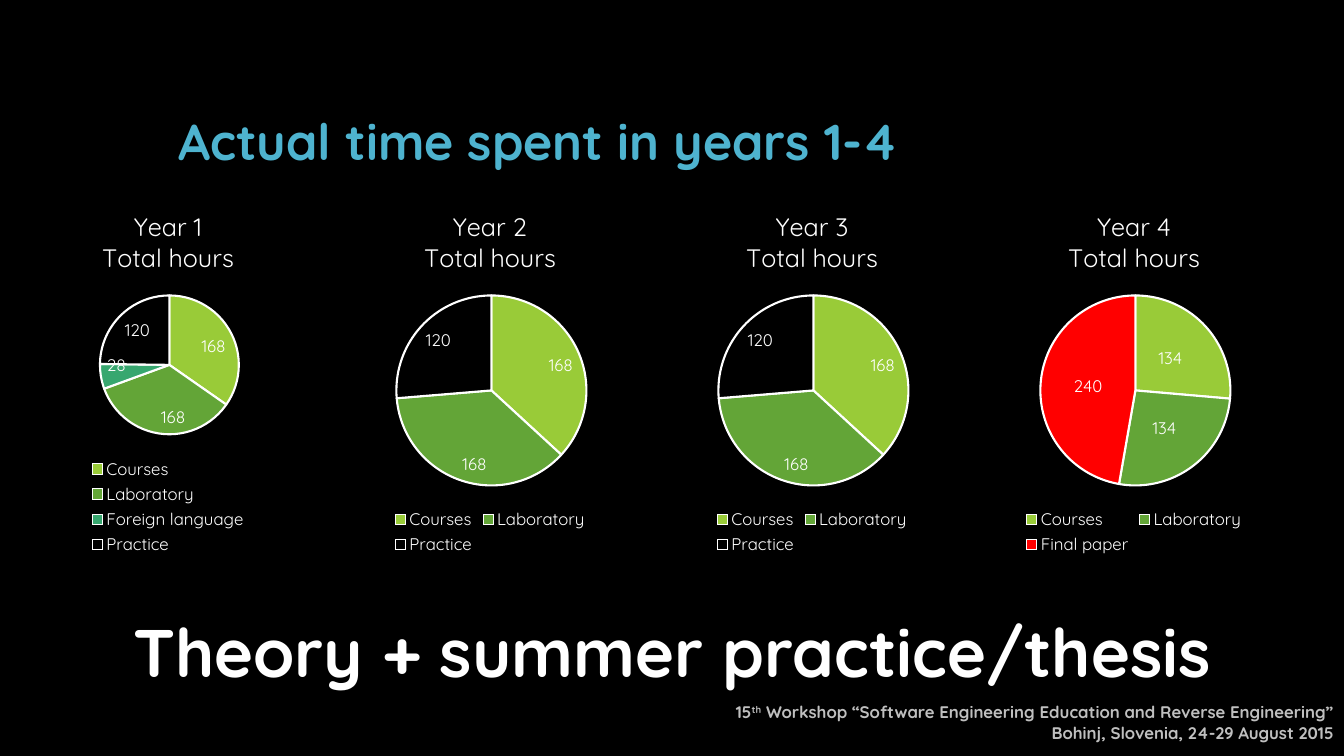
from lxml import etree
from pptx import Presentation
from pptx.chart.data import CategoryChartData
from pptx.dml.color import RGBColor
from pptx.enum.chart import XL_CHART_TYPE, XL_LABEL_POSITION, XL_LEGEND_POSITION
from pptx.enum.text import MSO_ANCHOR, PP_ALIGN
from pptx.oxml.ns import qn
from pptx.util import Inches, Pt

COLORS = {
    "background": "000000",
    "heading": "4EB3CF",
    "text": "FFFFFF",
    "footer": "BFBFBF",
    "Courses": "99CB38",
    "Laboratory": "63A537",
    "Foreign language": "37A76F",
    "Practice": "000000",
    "Final paper": "FF0000",
}
FONT = "Quicksand"
COLUMNS, ROWS = 160, 90

YEARS = [
    {"Courses": 168, "Laboratory": 168, "Foreign language": 28, "Practice": 120},
    {"Courses": 168, "Laboratory": 168, "Practice": 120},
    {"Courses": 168, "Laboratory": 168, "Practice": 120},
    {"Courses": 134, "Laboratory": 134, "Final paper": 240},
]
# Shares of the chart's width and height: x, y, w, h
SMALL_PIE = (0.26, 0.28, 0.49, 0.38)
LARGE_PIE = (0.17, 0.28, 0.67, 0.52)


def color(name):
    return RGBColor.from_string(COLORS[name])


class SlideBuilder:
    def __init__(self, presentation):
        self.width = presentation.slide_width
        self.height = presentation.slide_height
        self.slide = presentation.slides.add_slide(presentation.slide_layouts[5])
        fill = self.slide.background.fill
        fill.solid()
        fill.fore_color.rgb = color("background")

    def area(self, column, row, columns, rows):
        """Turn grid cells into left, top, width and height."""
        x, y = self.width / COLUMNS, self.height / ROWS
        return [round(n) for n in (column * x, row * y, columns * x, rows * y)]

    def style(self, font, size, color_name="text", bold=False):
        font.name = FONT
        font.size = Pt(size)
        font.bold = bold
        font.color.rgb = color(color_name)

    def title(self, wording, cells):
        heading = self.slide.shapes.title
        heading.left, heading.top, heading.width, heading.height = self.area(*cells)
        frame = heading.text_frame
        frame.text = wording
        frame.vertical_anchor = MSO_ANCHOR.BOTTOM
        paragraph = frame.paragraphs[0]
        paragraph.alignment = PP_ALIGN.LEFT
        paragraph.line_spacing = 0.9
        self.style(paragraph.font, 36, "heading", True)

    def text(self, lines, cells, size, color_name, alignment):
        """Add bold lines, each a list of (wording, is superscript) pairs."""
        frame = self.slide.shapes.add_textbox(*self.area(*cells)).text_frame
        frame.word_wrap = True
        frame.vertical_anchor = MSO_ANCHOR.MIDDLE
        for index, line in enumerate(lines):
            paragraph = frame.add_paragraph() if index else frame.paragraphs[0]
            paragraph.alignment = alignment
            self.style(paragraph.font, size, color_name, True)
            for wording, raised in line:
                run = paragraph.add_run()
                run.text = wording
                if raised:
                    run.font._element.set("baseline", "30000")

    def pie(self, heading, hours, cells, plot_shares, label_position):
        data = CategoryChartData()
        data.categories = list(hours)
        data.add_series("Series 1", list(hours.values()))
        chart = self.slide.shapes.add_chart(
            XL_CHART_TYPE.PIE, *self.area(*cells), data).chart
        self.style(chart.font, 10)

        chart.has_title = True
        frame = chart.chart_title.text_frame
        frame.text = heading
        for paragraph in frame.paragraphs:
            self.style(paragraph.font, 18)
        chart.chart_title.include_in_layout = False

        chart.has_legend = True
        chart.legend.position = XL_LEGEND_POSITION.BOTTOM
        chart.legend.include_in_layout = False
        self.style(chart.legend.font, 12)

        plot = chart.plots[0]
        plot.vary_by_categories = True
        plot.has_data_labels = True
        labels = plot.data_labels
        labels.show_value = True
        labels.show_percentage = False
        labels.position = label_position
        self.style(labels.font, 12)
        for index, activity in enumerate(hours):
            slice_format = plot.series[0].points[index].format
            slice_format.fill.solid()
            slice_format.fill.fore_color.rgb = color(activity)
            slice_format.line.color.rgb = color("text")
            slice_format.line.width = Pt(1.5)
        self.place_plot(chart, plot_shares)

    def place_plot(self, chart, shares):
        plot_area = chart._chartSpace.chart.plotArea
        for automatic in plot_area.findall(qn("c:layout")):
            plot_area.remove(automatic)
        layout = etree.Element(qn("c:layout"))
        manual = etree.SubElement(layout, qn("c:manualLayout"))
        settings = [("layoutTarget", "inner"), ("xMode", "edge"), ("yMode", "edge")]
        settings += zip("xywh", map(str, shares))
        for tag, value in settings:
            etree.SubElement(manual, qn(f"c:{tag}")).set("val", value)
        plot_area.insert(0, layout)


def main():
    presentation = Presentation()
    presentation.slide_width = Inches(13.33)
    presentation.slide_height = Inches(7.5)
    builder = SlideBuilder(presentation)

    builder.text(
        [[("15", False), ("th", True),
          (" Workshop “Software Engineering Education and Reverse Engineering”", False)],
         [("Bohinj, Slovenia, 24-29 August 2015", False)]],
        (85, 83, 75, 6), 12, "footer", PP_ALIGN.RIGHT)
    builder.title("Actual time spent in years 1-4", (20, 3, 120, 18))

    first_column, last_column = 3, 118
    pitch = (last_column - first_column) / (len(YEARS) - 1)
    for index, hours in enumerate(YEARS):
        builder.pie(
            f"Year {index + 1}\nTotal hours", hours,
            (first_column + index * pitch, 23, 34, 43.5),
            SMALL_PIE if len(hours) > 3 else LARGE_PIE,
            XL_LABEL_POSITION.CENTER if "Final paper" in hours
            else XL_LABEL_POSITION.INSIDE_END)

    builder.text([[("Theory + summer practice/thesis", False)]],
                 (6, 72, 148, 11), 48, "text", PP_ALIGN.CENTER)
    presentation.save("out.pptx")


if __name__ == "__main__":
    main()
